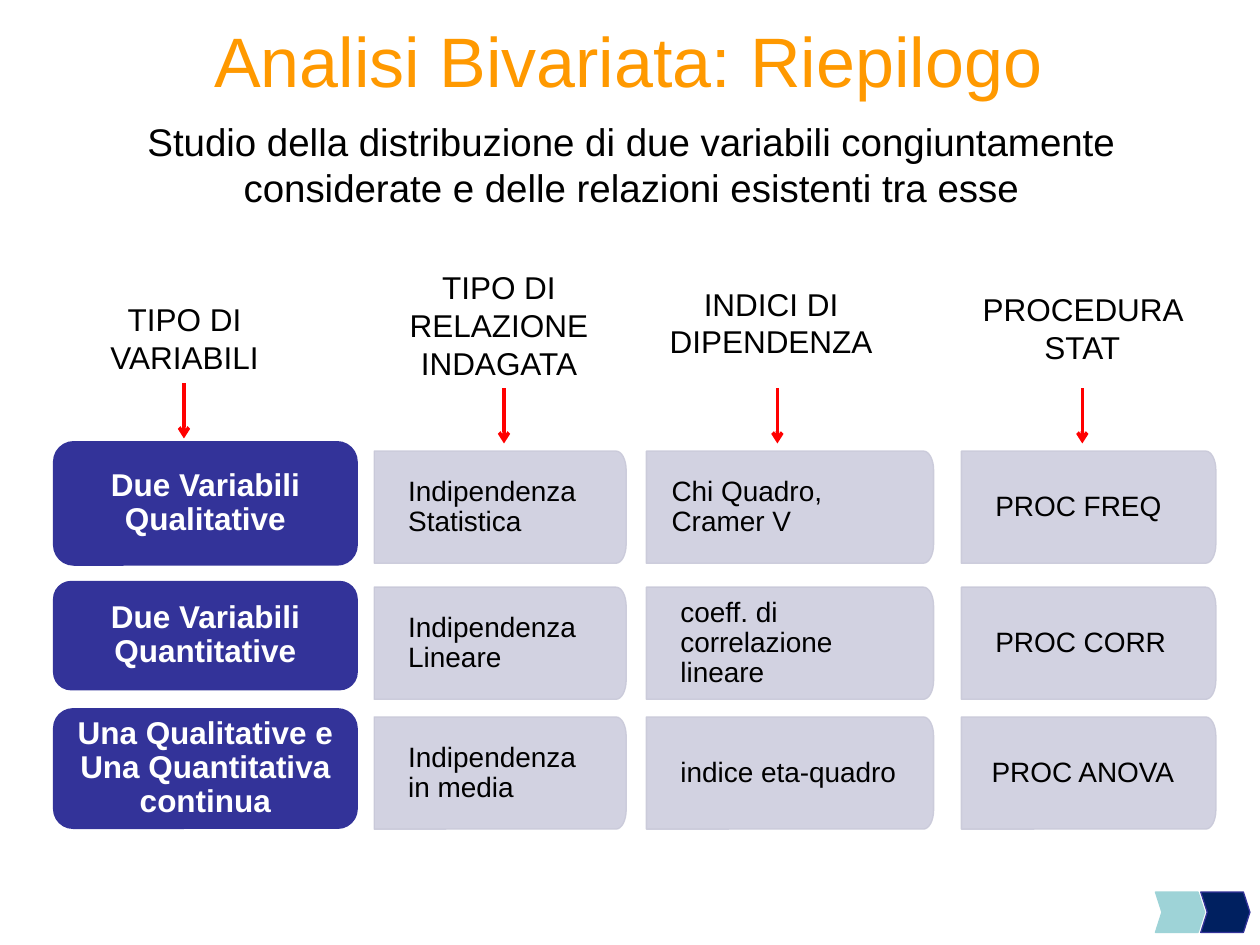
from math import cos, pi, sin

from lxml import etree
from pptx import Presentation
from pptx.dml.color import RGBColor
from pptx.enum.shapes import MSO_CONNECTOR, MSO_SHAPE
from pptx.enum.text import MSO_ANCHOR, MSO_AUTO_SIZE, PP_ALIGN
from pptx.oxml.ns import qn
from pptx.util import Inches, Pt

STRAIGHT = MSO_CONNECTOR.STRAIGHT
ROUNDED = MSO_SHAPE.ROUNDED_RECTANGLE
CHEVRON = MSO_SHAPE.CHEVRON
TOP, MIDDLE = MSO_ANCHOR.TOP, MSO_ANCHOR.MIDDLE
LEFT, CENTER = PP_ALIGN.LEFT, PP_ALIGN.CENTER
FIXED = MSO_AUTO_SIZE.NONE

ORANGE = RGBColor(0xFF, 0x99, 0x00)
BLACK = RGBColor(0, 0, 0)
WHITE = RGBColor(0xFF, 0xFF, 0xFF)
RED = RGBColor(0xFF, 0, 0)
INDIGO = RGBColor(0x33, 0x33, 0x99)
LAVENDER = RGBColor(0xCE, 0xCE, 0xDE)
LAVENDER_EDGE = RGBColor(0xC9, 0xC9, 0xD9)
NAVY = RGBColor(0x00, 0x20, 0x60)
AQUA = RGBColor(0x9E, 0xD3, 0xD7)

TITLE_FONT = {"name": "Arial", "size": Pt(40), "bold": False}
SUBTITLE_FONT = {"name": "Arial", "size": Pt(22)}
HEADING_FONT = {"name": "Arial", "size": Pt(18)}
VARIABLE_FONT = {"name": "Arial", "size": Pt(18), "bold": True}
CELL_FONT = {"name": "Arial", "size": Pt(16)}
MARGINS = (0.1, 0.05, 0.1, 0.05)

VARIABLES = [
    ("Due Variabili Qualitative", (0.42, 3.5, 2.42, 0.99)),
    ("Due Variabili Quantitative", (0.42, 4.61, 2.42, 0.87)),
    ("Una Qualitative e Una Quantitativa continua", (0.42, 5.62, 2.42, 0.96)),
]
CELL_TOPS = (3.58, 4.66, 5.69)
CELL_HEIGHT = 0.89
COLUMNS = [
    (2.97, 2, [("Indipendenza Statistica", 0.27, 0.31),
               ("Indipendenza Lineare", 0.27, 0.31),
               ("Indipendenza in media", 0.27, 0.31)]),
    (5.13, 2.28, [("Chi Quadro,\vCramer V", 0.2, 0),
                  ("coeff. di correlazione lineare", 0.27, 0.24),
                  ("indice eta-quadro", 0.27, 0.28)]),
    (7.63, 2.02, [("PROC FREQ", 0.27, 0.31),
                  ("PROC CORR", 0.27, 0.31),
                  ("PROC ANOVA", 0.24, 0.31)]),
]
HEADINGS = [
    ("TIPO DI VARIABILI", (0.68, 2.33, 1.57, 0.71), 1.46, 3.04),
    ("TIPO DI RELAZIONE INDAGATA", (2.92, 2.08, 2.08, 1.01), 4, 3.08),
    ("INDICI DI DIPENDENZA", (5.08, 2.21, 2.08, 0.71), 6.17, 3.08),
    ("PROCEDURA STAT", (7.58, 2.25, 2.02, 0.71), 8.59, 3.08),
]
ARROW_LENGTH = 0.44


def inches(box):
    return [Inches(length) for length in box]


def write(shape, text, font, color, align=CENTER, anchor=MIDDLE,
          margins=MARGINS, line_spacing=1.0):
    left, top, right, bottom = inches(margins)
    frame = shape.text_frame
    frame_format = {"word_wrap": True, "auto_size": FIXED,
                    "vertical_anchor": anchor, "margin_left": left,
                    "margin_top": top, "margin_right": right,
                    "margin_bottom": bottom}
    for name, value in frame_format.items():
        setattr(frame, name, value)
    frame.text = text
    paragraph = frame.paragraphs[0]
    paragraph.alignment = align
    paragraph.line_spacing = line_spacing
    for name, value in font.items():
        setattr(paragraph.font, name, value)
    paragraph.font.color.rgb = color


def paint(shape, fill, edge=None):
    shape.shadow.inherit = False
    shape.fill.solid()
    shape.fill.fore_color.rgb = fill
    if edge is None:
        shape.line.fill.background()
    else:
        shape.line.color.rgb = edge
        shape.line.width = Pt(0.75)


def add_title(slide, box):
    title = slide.shapes.title
    title.left, title.top, title.width, title.height = inches(box)
    write(title, "Analisi Bivariata: Riepilogo", TITLE_FONT, ORANGE)


def add_text(slide, box, text, font):
    write(slide.shapes.add_textbox(*inches(box)), text, font, BLACK, anchor=TOP)


def add_arrow(slide, x, top):
    arrow = slide.shapes.add_connector(
        STRAIGHT, *inches((x, top, x, top + ARROW_LENGTH)))
    arrow.line.color.rgb = RED
    arrow.line.width = Pt(2)
    properties = arrow.line._get_or_add_ln()
    etree.SubElement(properties, qn("a:tailEnd"), type="arrow")
    etree.SubElement(arrow._element.spPr, qn("a:effectLst"))


def add_variable(slide, box, text):
    variable = slide.shapes.add_shape(ROUNDED, *inches(box))
    paint(variable, INDIGO)
    write(variable, text, VARIABLE_FONT, WHITE,
          margins=(0.09, 0.05, 0.09, 0.05), line_spacing=0.9)


def add_cell(slide, box, text, inset_left, inset_right):
    left, top, width, height = box
    radius_x, radius_y = 0.08, 0.15
    right, bottom = left + width, top + height
    angles = [pi / 2 * step / 8 for step in range(9)]
    upper = [(right - radius_x * (1 - sin(a)), top + radius_y * (1 - cos(a)))
             for a in angles]
    lower = [(x, top + bottom - y) for x, y in reversed(upper)]
    outline = slide.shapes.build_freeform(Inches(left), Inches(top))
    outline.add_line_segments(
        [inches(point) for point in upper + lower + [(left, bottom)]])
    cell = outline.convert_to_shape()
    paint(cell, LAVENDER, LAVENDER_EDGE)
    for color in cell._element.spPr.iter(qn("a:srgbClr")):
        etree.SubElement(color, qn("a:alpha"), val="90000")
    write(cell, text, CELL_FONT, BLACK, LEFT,
          margins=(inset_left, 0.18, inset_right, 0.18), line_spacing=0.9)


def add_column(slide, left, width, entries):
    for top, (text, inset_left, inset_right) in zip(CELL_TOPS, entries):
        add_cell(slide, (left, top, width, CELL_HEIGHT),
                 text, inset_left, inset_right)


def add_chevrons(slide, box):
    left, top, width, height = box
    for x, fill, edge in ((left + 0.36, NAVY, INDIGO), (left, AQUA, AQUA)):
        chevron = slide.shapes.add_shape(
            CHEVRON, *inches((x, top, width, height)))
        chevron.adjustments[0] = 0.16
        paint(chevron, fill, edge)


def main():
    presentation = Presentation()
    presentation.slide_width = Inches(10)
    presentation.slide_height = Inches(7.5)
    slide = presentation.slides.add_slide(presentation.slide_layouts[5])
    add_title(slide, (0.1, 0, 9.77, 0.94))
    add_text(slide, (0.35, 0.89, 9.32, 0.84),
             "Studio della distribuzione di due variabili congiuntamente "
             "considerate e delle relazioni esistenti tra esse", SUBTITLE_FONT)
    for text, box in VARIABLES:
        add_variable(slide, box, text)
    for left, width, entries in COLUMNS:
        add_column(slide, left, width, entries)
    for text, box, arrow_x, arrow_top in HEADINGS:
        add_text(slide, box, text, HEADING_FONT)
        add_arrow(slide, arrow_x, arrow_top)
    add_chevrons(slide, (9.17, 7.08, 0.39, 0.32))
    presentation.save("out.pptx")


if __name__ == "__main__":
    main()
